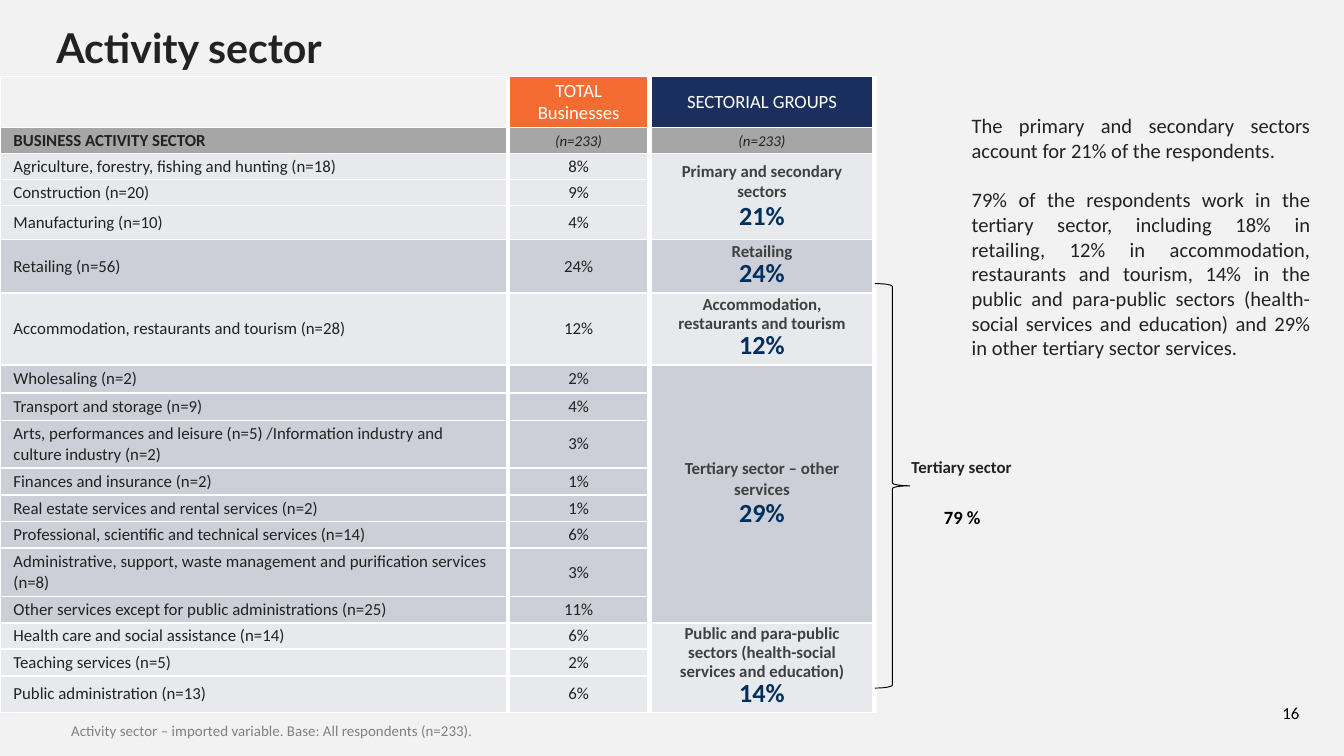
from pptx import Presentation
from pptx.dml.color import RGBColor
from pptx.enum import shapes, text
from pptx.oxml import parse_xml
from pptx.oxml.ns import nsdecls
from pptx.util import Pt

INK, WHITE, BLACK, PAGE = "222223", "FFFFFF", "000000", "F2F2F2"
LIGHT, DARK, GREY = "E7E9EC", "CCCFD7", "A6A6A6"
CENTER, MIDDLE = text.PP_ALIGN.CENTER, text.MSO_ANCHOR.MIDDLE
COLUMNS = [272.16, 75.6, 120.96]
ROWS = [27.3, 13.9, 13.9, 13.9, 18.5, 28.6, 38.6, 15, 14.5, 25.7,
        14.5, 14.2, 14.2, 26, 14.2, 13.9, 14.5, 19.5]
GROUPS = [
    ("Primary and secondary sectors", "21%", 11, [
        ("Agriculture, forestry, fishing and hunting (n=18)", "8%"),
        ("Construction (n=20)", "9%"),
        ("Manufacturing (n=10)", "4%")]),
    ("Retailing", "24%", 10, [("Retailing (n=56)", "24%")]),
    ("Accommodation, restaurants and tourism", "12%", 10, [
        ("Accommodation, restaurants and tourism (n=28)", "12%")]),
    ("Tertiary sector – other services", "29%", 11, [
        ("Wholesaling (n=2)", "2%"),
        ("Transport and storage (n=9)", "4%"),
        ("Arts, performances and leisure (n=5) /Information industry and culture industry (n=2)", "3%"),
        ("Finances and insurance (n=2)", "1%"),
        ("Real estate services and rental services (n=2)", "1%"),
        ("Professional, scientific and technical services (n=14)", "6%"),
        ("Administrative, support, waste management and purification services (n=8)", "3%"),
        ("Other services except for public administrations (n=25)", "11%")]),
    ("Public and para-public sectors (health-social services and education)", "14%", 10, [
        ("Health care and social assistance (n=14)", "6%"),
        ("Teaching services (n=5)", "2%"),
        ("Public administration (n=13)", "6%")]),
]
COMMENTS = [
    "The primary and secondary sectors account for 21% of the respondents.",
    "79% of the respondents work in the tertiary sector, including 18% in retailing, "
    "12% in accommodation, restaurants and tourism, 14% in the public and para-public "
    "sectors (health-social services and education) and 29% in other tertiary sector services.",
]


def rgb(value):
    """Turn a hex string into a colour."""
    return RGBColor.from_string(value)


def style(p, size, color=INK, bold=False, italic=False, align=None, name="Calibri"):
    """Format a paragraph and its runs."""
    p.alignment = align
    for r in p.runs:
        f = r.font
        f.name, f.size, f.bold, f.italic = name, Pt(size), bold, italic
        f.color.rgb = rgb(color)


def set_insets(frame, x, y):
    """Set the side and the top and bottom margins of a frame or cell."""
    frame.margin_left = frame.margin_right = Pt(x)
    frame.margin_top = frame.margin_bottom = Pt(y)


def add_text(s, box, lines, size, insets=(7.2, 3.6), **look):
    """Add a wrapping text box and return its frame."""
    tf = s.shapes.add_textbox(*map(Pt, box)).text_frame
    tf.word_wrap = True
    set_insets(tf, *insets)
    tf.text = "\n".join(lines)
    for p in tf.paragraphs:
        style(p, size, **look)
    return tf


def add_title(s, box):
    """Place and format the slide title."""
    title = s.shapes.title
    title.left, title.top, title.width, title.height = map(Pt, box)
    tf = title.text_frame
    tf.text = "Activity sector"
    tf.vertical_anchor = MIDDLE
    set_insets(tf, 5, 2.9)
    p = tf.paragraphs[0]
    style(p, 22, bold=True, align=text.PP_ALIGN.LEFT, name="Lato")
    p.line_spacing = 0.9


def add_borders(cell, first):
    """Draw white cell borders, thick between columns."""
    widths = {"L": 0.75 if first else 3, "R": 3, "T": 0.75, "B": 0.75}
    for side, width in widths.items():
        cell._tc.get_or_add_tcPr().append(parse_xml(
            f'<a:ln{side} {nsdecls("a")} w="{Pt(width)}"><a:solidFill>'
            f'<a:srgbClr val="{WHITE}"/></a:solidFill></a:ln{side}>'))


def fill_cell(cell, lines, fill, size=9, spacing=11, **look):
    """Write and colour one table cell."""
    cell.text = "\n".join(lines)
    cell.fill.solid()
    cell.fill.fore_color.rgb = rgb(fill)
    for p in cell.text_frame.paragraphs:
        style(p, size, **look)
        if spacing:
            p.line_spacing = Pt(spacing)


def add_sector_table(s, box):
    """Build the table of sectors and their groups."""
    table = s.shapes.add_table(len(ROWS), len(COLUMNS), *map(Pt, box)).table
    table.first_row = table.horz_banding = False
    for column, width in zip(table.columns, COLUMNS):
        column.width = Pt(width)
    for row, height in zip(table.rows, ROWS):
        row.height = Pt(height)
        for i, cell in enumerate(row.cells):
            set_insets(cell, 7.2, 1.44)
            cell.vertical_anchor = MIDDLE
            add_borders(cell, i == 0)
    table.cell(0, 0).fill.background()
    heads = [(["TOTAL", "Businesses"], "F46C31"), (["SECTORIAL GROUPS"], "1B2F5F")]
    for col, (lines, fill) in enumerate(heads, 1):
        fill_cell(table.cell(0, col), lines, fill, 10, None, color=WHITE, align=CENTER)
        fill_cell(table.cell(1, col), ["(n=233)"], GREY, 8, italic=True, align=CENTER)
    fill_cell(table.cell(1, 0), ["BUSINESS ACTIVITY SECTOR"], GREY, bold=True)
    top = 2
    for i, (group, share, spacing, sectors) in enumerate(GROUPS):
        fill = DARK if i % 2 else LIGHT
        for row, (sector, value) in enumerate(sectors, top):
            fill_cell(table.cell(row, 0), [sector], fill)
            fill_cell(table.cell(row, 1), [value], fill, align=CENTER)
        cell = table.cell(top, 2)
        if len(sectors) > 1:
            cell.merge(table.cell(top + len(sectors) - 1, 2))
        fill_cell(cell, [group, share], fill, spacing=spacing,
                  color="404040", bold=True, align=CENTER)
        label, total = cell.text_frame.paragraphs
        label.space_after = Pt(5)
        style(total, 14, "002F5F", True, align=CENTER)
        top += len(sectors)


def add_comments(s, box):
    """Add the commentary on the right."""
    tf = add_text(s, box, COMMENTS, 11, (7.2, 0), align=text.PP_ALIGN.JUSTIFY)
    tf.paragraphs[0].space_after = Pt(13.4)


def add_tertiary_total(s, box):
    """Add the brace with the tertiary sector label and share."""
    x, y, w, h = box
    add_text(s, (x + 15.8, y + 92.9, 61.2, 10.8), ["Tertiary sector"], 9, (0, 0),
             bold=True, align=CENTER)
    sp = s.shapes.add_shape(shapes.MSO_SHAPE.RECTANGLE,
                            *map(Pt, (x + 28.8, y + 118.1, 36, 14.4)))
    sp.shadow.inherit = False
    sp.fill.solid()
    sp.fill.fore_color.rgb = rgb(PAGE)
    sp.line.fill.background()
    tf = sp.text_frame
    tf.text = "79 %"
    tf.word_wrap = True
    tf.vertical_anchor = MIDDLE
    style(tf.paragraphs[0], 10, BLACK, True, align=CENTER)
    brace = s.shapes.add_shape(shapes.MSO_SHAPE.RIGHT_BRACE, *map(Pt, (x, y, w, h)))
    brace.shadow.inherit = False
    brace.fill.background()
    brace.line.color.rgb = rgb(BLACK)
    brace.line.width = Pt(0.5)


def main():
    """Build and save the slide."""
    prs = Presentation()
    prs.slide_width, prs.slide_height = Pt(720), Pt(405)
    s = prs.slides.add_slide(prs.slide_layouts[5])
    s.background.fill.solid()
    s.background.fill.fore_color.rgb = rgb(PAGE)
    number = add_text(s, (673.2, 369.4, 36.7, 21.6), ["16"], 9, color=BLACK, align=CENTER)
    number.vertical_anchor = text.MSO_ANCHOR.BOTTOM
    add_title(s, (25.2, 13.7, 675.4, 25.9))
    add_sector_table(s, (0, 41, sum(COLUMNS), sum(ROWS)))
    add_text(s, (31, 383, 581.8, 17.3),
             ["Activity sector – imported variable. Base: All respondents (n=233)."],
             8, color="808080")
    add_comments(s, (513.4, 60.5, 195.8, 133.2))
    add_tertiary_total(s, (468.7, 151.9, 18.7, 216.7))
    prs.save("out.pptx")


if __name__ == "__main__":
    main()
